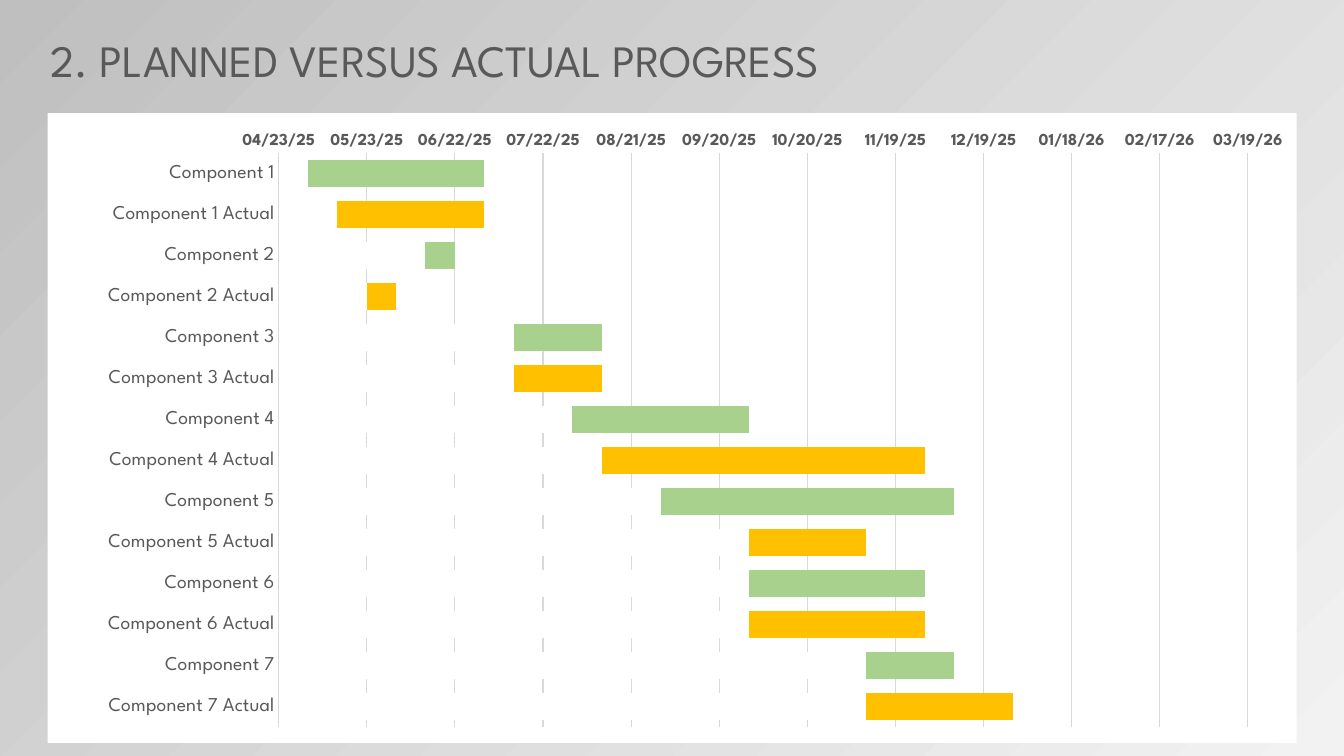
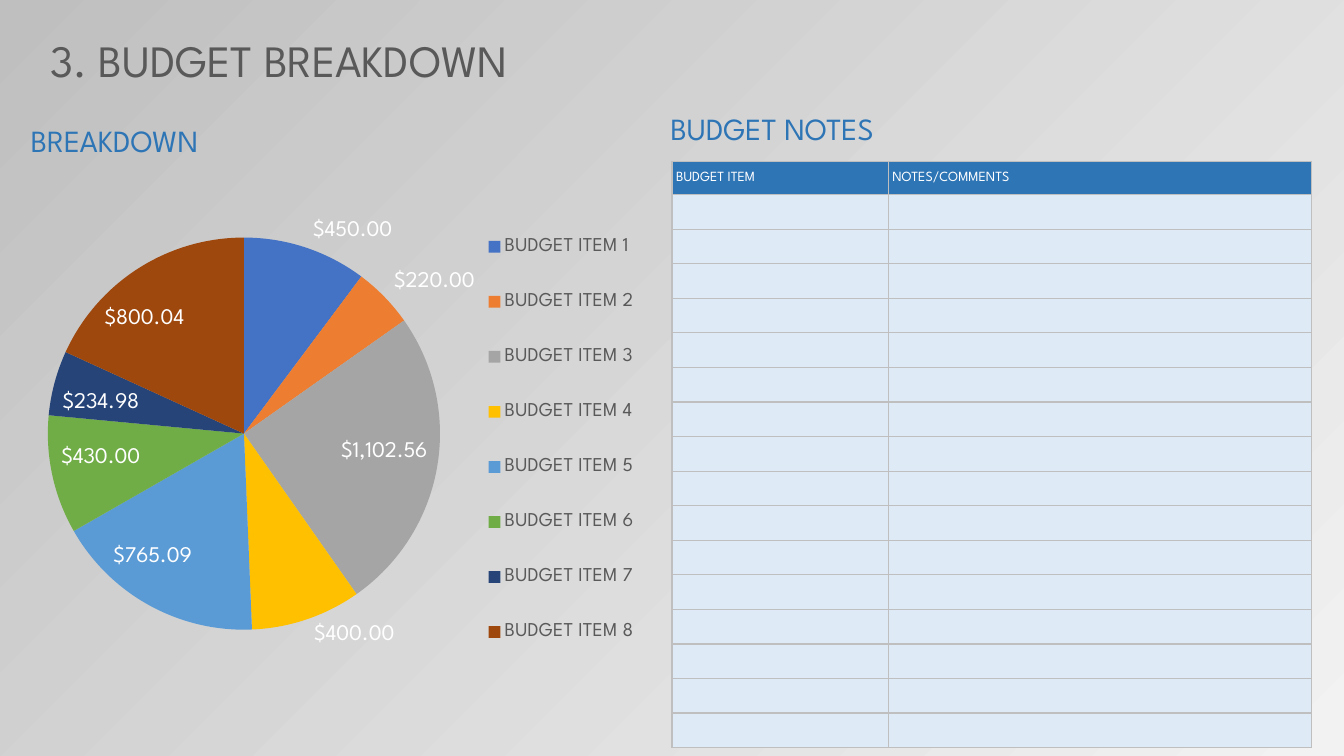
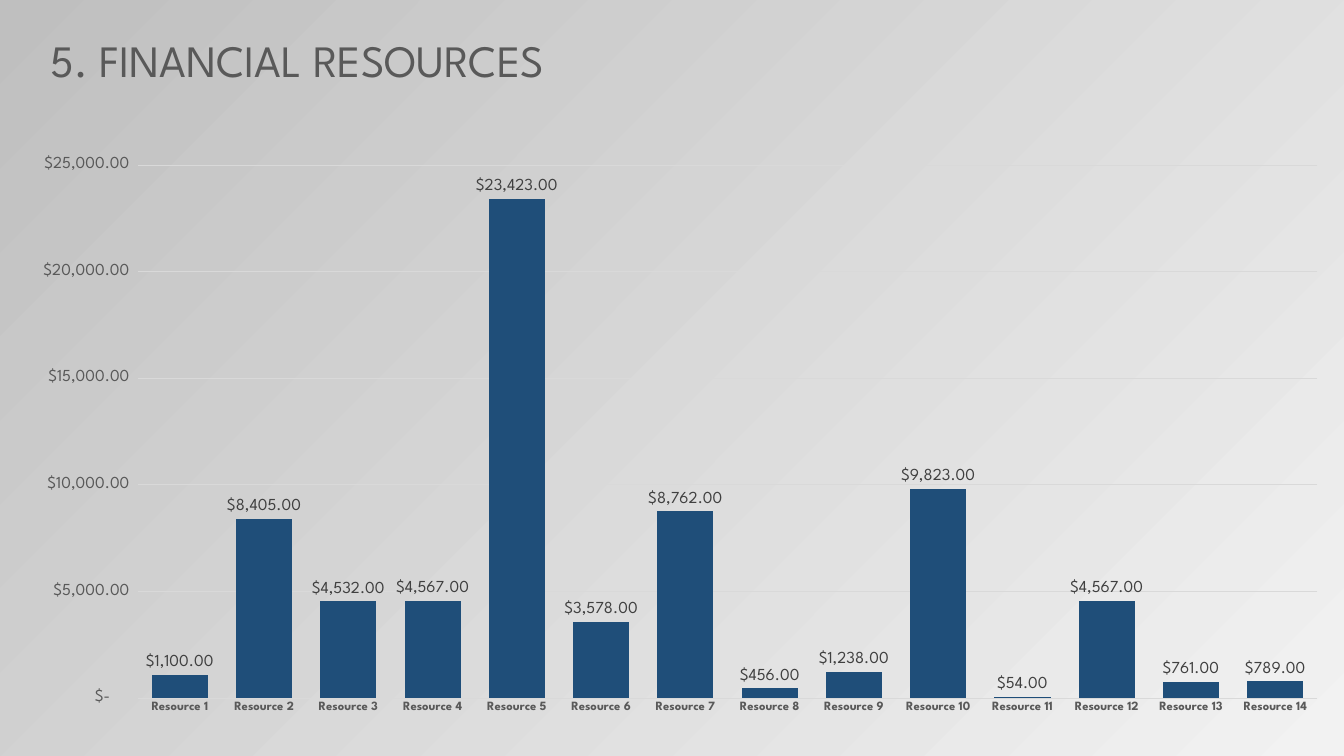
from pptx import Presentation
from pptx.chart.data import CategoryChartData
from pptx.dml.color import RGBColor
from pptx.enum import chart as ch, text as tx
from pptx.oxml import parse_xml
from pptx.oxml.ns import nsdecls
from pptx.util import Pt

FONT = "League Spartan"
WHITE = RGBColor(0xFF, 0xFF, 0xFF)
PALE = RGBColor(0xF2, 0xF2, 0xF2)
SILVER = RGBColor(0xBF, 0xBF, 0xBF)
GRID = RGBColor(0xD9, 0xD9, 0xD9)
GREY = RGBColor(0x59, 0x59, 0x59)
DARK = RGBColor(0x40, 0x40, 0x40)
BLUE = RGBColor(0x2E, 0x75, 0xB6)
ICE = RGBColor(0xDE, 0xEB, 0xF7)
NAVY = RGBColor(0x1F, 0x4E, 0x79)
GREEN = RGBColor(0xA9, 0xD1, 0x8E)
AMBER = RGBColor(0xFF, 0xC0, 0x00)
SLICES = [RGBColor.from_string(code) for code in (
    "4472C4", "ED7D31", "A5A5A5", "FFC000",
    "5B9BD5", "70AD47", "264478", "9E480E")]

MONEY = '_("$"* #,##0.00_);_("$"* \\(#,##0.00\\);_("$"* "-"??_);_(@_)'

# Day numbers: (start, end) for each component, planned then actual
TASKS = [
    ((45780, 45840), (45790, 45840)),
    ((45820, 45830), (45800, 45810)),
    ((45850, 45880), (45850, 45880)),
    ((45870, 45930), (45880, 45990)),
    ((45900, 46000), (45930, 45970)),
    ((45930, 45990), (45930, 45990)),
    ((45970, 46000), (45970, 46020)),
]
BUDGET = [450, 220, 1102.56, 400, 765.09, 430, 234.98, 800.04]
FUNDS = [1100, 8405, 4532, 4567, 23423, 3578, 8762,
         456, 1238, 9823, 54, 4567, 761, 789]


def style(font, size, color, bold=False):
    font.name, font.size, font.bold = FONT, Pt(size), bold
    font.color.rgb = color


def write(frame, words, size, color):
    run = frame.paragraphs[0].add_run()
    run.text = words
    style(run.font, size, color)


def label(slide, words, box, size=22, color=BLUE, wrap=True):
    frame = slide.shapes.add_textbox(*map(Pt, box)).text_frame
    frame.word_wrap = wrap
    frame.auto_size = tx.MSO_AUTO_SIZE.SHAPE_TO_FIT_TEXT
    write(frame, words, size, color)


def page(deck, title, width):
    slide = deck.slides.add_slide(deck.slide_layouts[6])
    label(slide, title, (29, 19.5, width, 46), 32, GREY, wrap=False)
    return slide


def backdrop(deck):
    fill = deck.slide_master.background.fill
    fill.gradient()
    fill.gradient_angle = 135
    for stop, color in zip(fill.gradient_stops, (PALE, SILVER)):
        stop.color.rgb = color


def paint(item, color):
    item.format.fill.solid()
    item.format.fill.fore_color.rgb = color


def graph(slide, kind, box, names, *rows, back=None):
    """Add a chart with one series per row and a plain or clear back."""
    data = CategoryChartData()
    data.categories = names
    for num, row in enumerate(rows, 1):
        data.add_series(f"Series {num}", row)
    chart = slide.shapes.add_chart(kind, *map(Pt, box), data).chart
    chart.has_title = chart.has_legend = False
    chart.font.name, chart.font.size = FONT, Pt(10)
    fill = (f'<a:solidFill><a:srgbClr val="{back}"/></a:solidFill>'
            if back else "<a:noFill/>")
    chart.element.xpath("c:chart")[0].addnext(parse_xml(
        f'<c:spPr {nsdecls("c", "a")}>{fill}<a:ln><a:noFill/></a:ln></c:spPr>'))
    chart.plots[0].vary_by_categories = kind == ch.XL_CHART_TYPE.PIE
    return chart


def place(owner, slot, *frac, inner=False):
    """Fix the x, y, width and height of a chart part as shares of the chart."""
    for old in owner.xpath("c:layout"):
        owner.remove(old)
    target = '<c:layoutTarget val="inner"/>' if inner else ""
    modes = "".join(f'<c:{k}Mode val="edge"/>' for k in "xy")
    sizes = "".join(f'<c:{k} val="{v}"/>' for k, v in zip("xywh", frac))
    owner.insert(slot, parse_xml(
        f'<c:layout {nsdecls("c")}><c:manualLayout>{target}{modes}{sizes}'
        "</c:manualLayout></c:layout>"))


def plain(axis, size, bold=False):
    axis.major_tick_mark = axis.minor_tick_mark = ch.XL_TICK_MARK.NONE
    style(axis.tick_labels.font, size, GREY, bold)


def rule(line):
    line.color.rgb = GRID
    line.width = Pt(0.75)


def axes(chart, small, large, bounds, form, bold_names=False, bold_values=False):
    names, values = chart.category_axis, chart.value_axis
    plain(names, small, bold_names)
    plain(values, large, bold_values)
    names.has_major_gridlines = False
    rule(names.format.line)
    values.has_major_gridlines = True
    rule(values.major_gridlines.format.line)
    values.format.line.fill.background()
    values.minimum_scale, values.maximum_scale, values.major_unit = bounds
    values.tick_labels.number_format = form
    values.tick_labels.number_format_is_linked = False
    chart.plots[0].gap_width = 50


def tags(chart, size, color, spot):
    plot = chart.plots[0]
    plot.has_data_labels = True
    labels = plot.data_labels
    labels.show_value = True
    labels.number_format = MONEY
    labels.number_format_is_linked = False
    labels.position = spot
    style(labels.font, size, color)


def edge(cell):
    props = cell._tc.get_or_add_tcPr()
    for slot, side in enumerate("LRTB"):
        props.insert(slot, parse_xml(
            f'<a:ln{side} {nsdecls("a")} w="{Pt(1)}"><a:solidFill>'
            f'<a:srgbClr val="{SILVER}"/></a:solidFill></a:ln{side}>'))


def notes(slide, box, heads, widths, count):
    """Add a table with a header row and empty rows to fill in."""
    table = slide.shapes.add_table(count + 1, len(heads), *map(Pt, box)).table
    for col, width in zip(table.columns, widths):
        col.width = Pt(width)
    for num, row in enumerate(table.rows):
        row.height = Pt(24.7 if num else 23.8)
        for cell, head in zip(row.cells, heads):
            cell.fill.solid()
            cell.fill.fore_color.rgb = ICE if num else BLUE
            cell.margin_left = Pt(3)
            cell.margin_right = cell.margin_top = cell.margin_bottom = 0
            cell.vertical_anchor = tx.MSO_ANCHOR.MIDDLE
            edge(cell)
            if not num:
                write(cell.text_frame, head, 10, WHITE)


def progress(deck):
    slide = page(deck, "2. PLANNED VERSUS ACTUAL PROGRESS", 626)
    names = [f"Component {num}{end}" for num in range(1, len(TASKS) + 1)
             for end in ("", " Actual")]
    starts, ends = zip(*(span for pair in TASKS for span in pair))
    chart = graph(slide, ch.XL_CHART_TYPE.BAR_CLUSTERED, (34, 80.8, 892.3, 449.8),
                  names, ends, starts, back=WHITE)
    axes(chart, 14, 12, (45770, 46100, 30), "mm/dd/yy;@", bold_values=True)
    chart.category_axis.reverse_order = True
    plot = chart.plots[0]
    plot.overlap = 100
    done, wait = plot.series
    paint(done, AMBER)
    paint(wait, WHITE)
    for num in range(0, len(names), 2):
        paint(done.points[num], GREEN)
    place(chart.element.xpath("c:chart/c:plotArea")[0], 0,
          0.185, 0.064, 0.776, 0.911, inner=True)


def budget(deck):
    slide = page(deck, "3. BUDGET BREAKDOWN", 388)
    names = [f"BUDGET ITEM {num}" for num in range(1, len(BUDGET) + 1)]
    chart = graph(slide, ch.XL_CHART_TYPE.PIE, (-65, 65, 545, 461), names, BUDGET)
    for num, color in enumerate(SLICES):
        paint(chart.plots[0].series[0].points[num], color)
    tags(chart, 16, WHITE, ch.XL_LABEL_POSITION.BEST_FIT)
    chart.has_legend = True
    chart.legend.include_in_layout = False
    style(chart.legend.font, 14, GREY)
    place(chart.legend._element, 1, 0.74, 0.17, 0.23, 0.74)
    place(chart.element.xpath("c:chart/c:plotArea")[0], 0,
          0.182, 0.062, 0.514, 0.938, inner=True)
    label(slide, "BREAKDOWN", (15, 83.5, 320, 34))
    label(slide, "BUDGET NOTES", (472, 75, 320, 34))
    notes(slide, (480, 115.2, 456.8, 419), ("BUDGET ITEM", "NOTES/COMMENTS"),
          (154.4, 302.4), 16)


def funds(deck):
    slide = page(deck, "5. FINANCIAL RESOURCES", 408)
    names = [f"Resource {num}" for num in range(1, len(FUNDS) + 1)]
    chart = graph(slide, ch.XL_CHART_TYPE.COLUMN_CLUSTERED,
                  (9, 104, 951, 414), names, FUNDS)
    axes(chart, 9, 12, (0, 25000, 5000), MONEY, bold_names=True)
    paint(chart.plots[0].series[0], NAVY)
    tags(chart, 12, DARK, ch.XL_LABEL_POSITION.OUTSIDE_END)


def main():
    deck = Presentation()
    deck.slide_width, deck.slide_height = Pt(960), Pt(540)
    backdrop(deck)
    progress(deck)
    budget(deck)
    funds(deck)
    deck.save("out.pptx")


if __name__ == "__main__":
    main()
